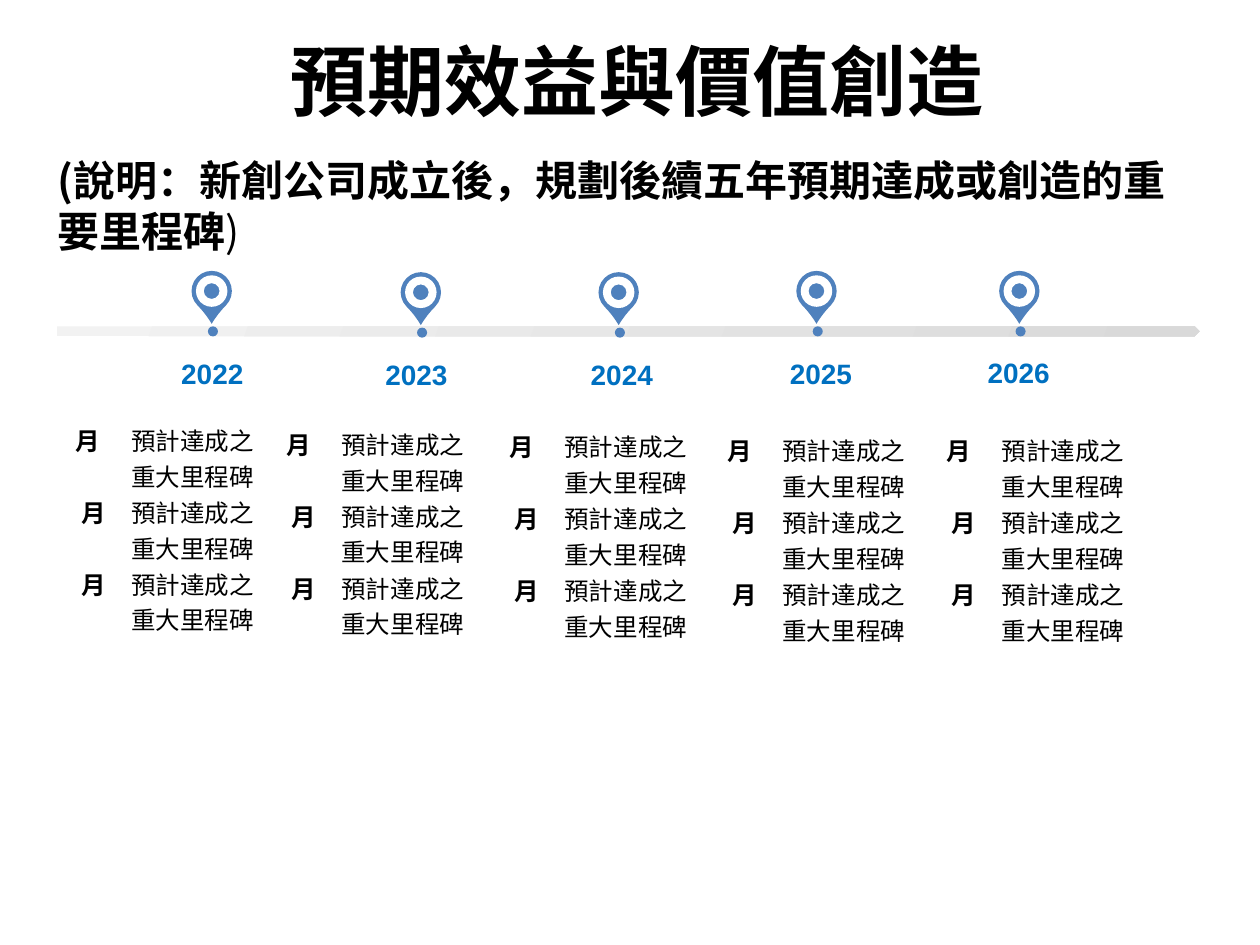
from lxml.etree import SubElement
from pptx import Presentation
from pptx.dml.color import RGBColor
from pptx.enum.shapes import MSO_SHAPE as Shape
from pptx.enum.text import MSO_ANCHOR as Anchor, MSO_AUTO_SIZE as AutoSize, PP_ALIGN as Align
from pptx.oxml.ns import qn
from pptx.util import Inches, Pt

CJK = "Noto Sans CJK SC"
BLACK, BLUE, PIN_BLUE, WHITE = "000000", "0070C0", "4F81BD", "FFFFFF"

TITLE = "預期效益與價值創造"
NOTE = [("(說明：新創公司成立後，規劃後續五年預期達成或創造的重要里程碑", True), (")", False)]
MILESTONES = [("月 ", "預計達成之重大里程碑"),
              ("月", "預計達成之重大里程碑"),
              ("月", "預計達成之重大里程碑")]
# year, pin (left, top), year label (left, top), table (left, top)
YEARS = [
    ("2022", (1.52, 2.15), (1.3, 2.78), (0.36, 3.35)),
    ("2023", (3.18, 2.16), (2.92, 2.79), (2.03, 3.38)),
    ("2024", (4.75, 2.16), (4.55, 2.79), (3.8, 3.4)),
    ("2025", (6.32, 2.15), (6.13, 2.78), (5.53, 3.43)),
    ("2026", (7.93, 2.15), (7.7, 2.77), (7.27, 3.43)),
]
COLUMN_WIDTHS = (0.58, 1.31)
ROW_HEIGHTS = [0.57] * 3 + [0.33] * 5


def rgb(color):
    return RGBColor.from_string(color)


def add_run(paragraph, text, size, color=BLACK, bold=True, font=CJK):
    run = paragraph.add_run()
    run.text = text
    run.font.size, run.font.bold, run.font.name = Pt(size), bold, font
    run.font.color.rgb = rgb(color)
    SubElement(run.font._element, qn("a:ea")).set("typeface", font)


def add_textbox(slide, left, top, width, height, align, anchor=Anchor.TOP, grow=True):
    """Return the first paragraph of a new wrapping text box."""
    box = slide.shapes.add_textbox(*map(Inches, (left, top, width, height)))
    frame = box.text_frame
    frame.word_wrap, frame.vertical_anchor = True, anchor
    frame.auto_size = AutoSize.SHAPE_TO_FIT_TEXT if grow else AutoSize.NONE
    frame.paragraphs[0].alignment = align
    return frame.paragraphs[0]


def add_plain_shape(shapes, kind, left, top, width, height, color=None):
    shape = shapes.add_shape(kind, *map(Inches, (left, top, width, height)))
    shape.shadow.inherit = False
    shape.line.fill.background()
    if color:
        shape.fill.solid()
        shape.fill.fore_color.rgb = rgb(color)
    return shape


def add_timeline(slide):
    bar = add_plain_shape(slide.shapes, Shape.PENTAGON, 0.45, 2.59, 9.07, 0.08)
    bar.fill.gradient()
    bar.fill.gradient_angle = 340
    for stop, color, position in zip(bar.fill.gradient_stops, ("F2F2F2", "D9D9D9"), (0, 1)):
        stop.color.rgb = rgb(color)
        stop.position = position


def add_pin(slide, left, top):
    shapes = slide.shapes.add_group_shape().shapes
    add_plain_shape(shapes, Shape.OVAL, left + 0.13, top + 0.44, 0.08, 0.08, PIN_BLUE)
    drop = add_plain_shape(shapes, Shape.TEAR, left, top, 0.32, 0.32, PIN_BLUE)
    drop.adjustments[0] = 1.15
    drop.rotation = 135
    add_plain_shape(shapes, Shape.DONUT, left + 0.035, top + 0.035, 0.25, 0.25, WHITE)


def add_milestones(slide, left, top):
    frame = slide.shapes.add_table(
        len(ROW_HEIGHTS), len(COLUMN_WIDTHS), Inches(left), Inches(top),
        Inches(sum(COLUMN_WIDTHS)), Inches(sum(ROW_HEIGHTS)))
    table = frame.table
    table.first_row = table.horz_banding = False
    for column, width in zip(table.columns, COLUMN_WIDTHS):
        column.width = Inches(width)
    for row, height in zip(table.rows, ROW_HEIGHTS):
        row.height = Inches(height)
    for cell in table.iter_cells():
        cell.fill.background()
        cell.margin_top = cell.margin_bottom = 0
        borders = cell._tc.get_or_add_tcPr()
        for index, side in enumerate(("a:lnL", "a:lnR", "a:lnT", "a:lnB")):
            line = borders.makeelement(qn(side), {"w": "0"})
            SubElement(line, qn("a:noFill"))
            borders.insert(index, line)
    for row, texts in enumerate(MILESTONES):
        for column, text in enumerate(texts):
            paragraph = table.cell(row, column).text_frame.paragraphs[0]
            paragraph.alignment = (Align.RIGHT, Align.LEFT)[column]
            add_run(paragraph, text, 14, bold=column == 0)


def main():
    presentation = Presentation()
    presentation.slide_width, presentation.slide_height = Inches(10), Inches(7.5)
    slide = presentation.slides.add_slide(presentation.slide_layouts[6])
    add_timeline(slide)
    for year, pin, label, table in YEARS:
        add_pin(slide, *pin)
        add_run(add_textbox(slide, *label, 0.77, 0.37, Align.CENTER), year, 16, BLUE, font="Arial")
        add_milestones(slide, *table)
    note = add_textbox(slide, 0.36, 1.18, 9.28, 0.91, Align.LEFT)
    for text, bold in NOTE:
        add_run(note, text, 24, bold=bold)
    title = add_textbox(slide, 0.56, 0.01, 9, 1.25, Align.CENTER, Anchor.MIDDLE, grow=False)
    add_run(title, TITLE, 44)
    presentation.save("out.pptx")


if __name__ == "__main__":
    main()
